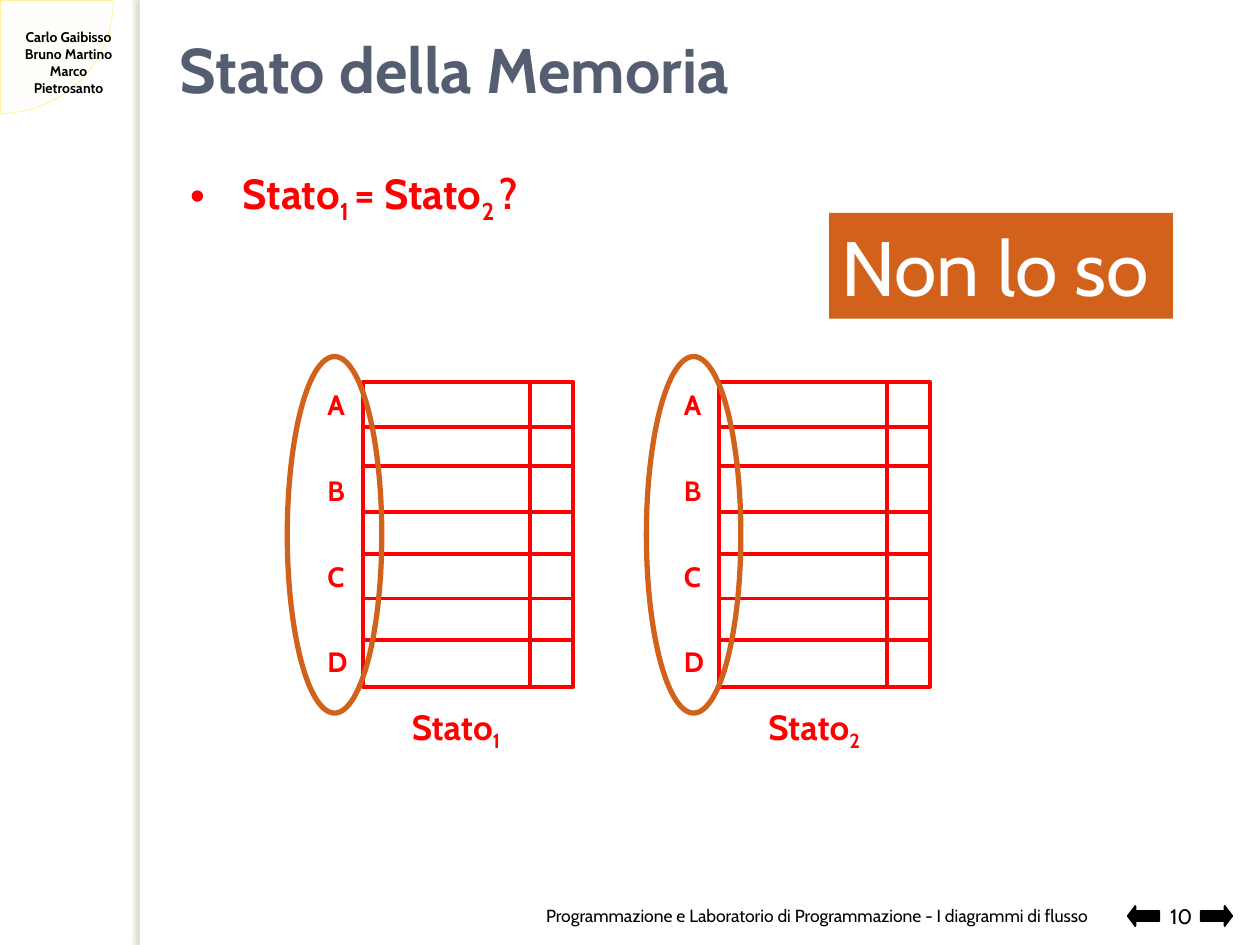
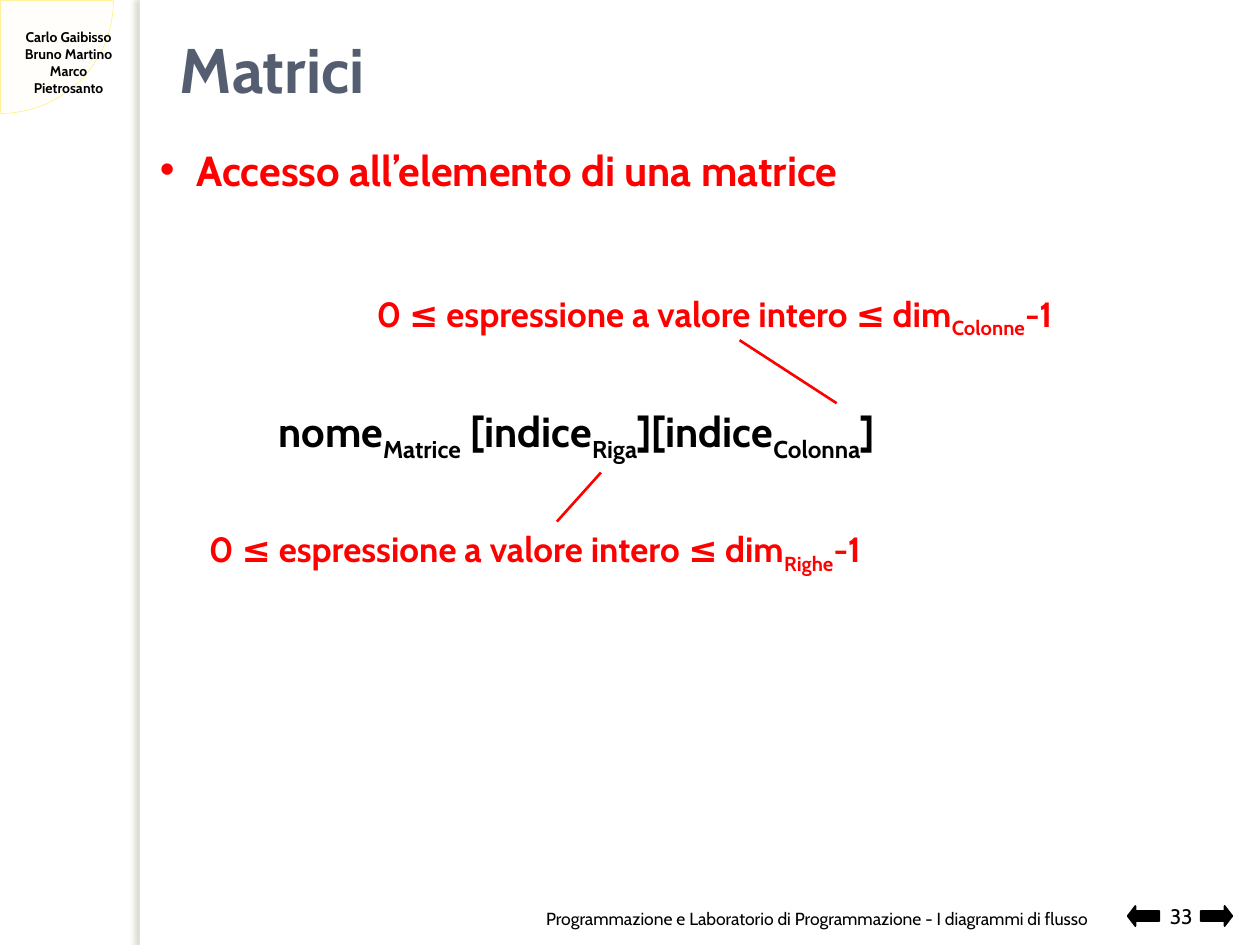
from dataclasses import dataclass

from lxml.etree import SubElement
from pptx import Presentation
from pptx.dml.color import RGBColor
from pptx.enum.shapes import MSO_CONNECTOR, MSO_SHAPE
from pptx.enum.text import MSO_ANCHOR, MSO_AUTO_SIZE, PP_ALIGN
from pptx.oxml.ns import qn
from pptx.util import Inches, Pt

FONT = "Cabin"
BLACK = RGBColor(0x00, 0x00, 0x00)
WHITE = RGBColor(0xFF, 0xFF, 0xFF)
RED = RGBColor(0xFF, 0x00, 0x00)
ORANGE = RGBColor(0xD2, 0x61, 0x1C)
SLATE = RGBColor(0x54, 0x5E, 0x70)
CREAM = RGBColor(0xFF, 0xFD, 0xF1)
YELLOW = RGBColor(0xFF, 0xEC, 0x62)
SHADOW = RGBColor(0x81, 0x7B, 0x4C)

AUTHORS = ["Carlo Gaibisso", "Bruno Martino", "Marco", "Pietrosanto"]
COURSE = "Programmazione e Laboratorio di Programmazione - I diagrammi di flusso"
INDEX_RANGE = "0 ≤ espressione a valore intero ≤ dim"


@dataclass
class Style:
    """Look of a text box; lengths in inches, sizes in points."""
    size: float
    color: RGBColor = RED
    bold: bool = True
    align: PP_ALIGN = PP_ALIGN.LEFT
    anchor: MSO_ANCHOR = MSO_ANCHOR.TOP
    wrap: bool = False
    grow: bool = True
    before: float = 0
    after: float = 0
    indent: float = 0
    bullet: bool = False


@dataclass
class Memory:
    """One memory grid with its labelled cells and caption."""
    left: float
    number: str
    ellipse_left: float


TITLE = Style(36, SLATE, anchor=MSO_ANCHOR.MIDDLE, wrap=True)
AUTHOR = Style(8, BLACK, align=PP_ALIGN.CENTER, wrap=True)
FOOTER = Style(10, BLACK, False, PP_ALIGN.RIGHT, MSO_ANCHOR.BOTTOM, True, False)
NUMBER = Style(12, BLACK, False, PP_ALIGN.CENTER, MSO_ANCHOR.BOTTOM, True, False)
QUESTION = Style(24, anchor=MSO_ANCHOR.MIDDLE, before=3, after=3, indent=0.42, bullet=True)
CAPTION = Style(20, anchor=MSO_ANCHOR.MIDDLE, before=3, after=3)
CELL_LABEL = Style(16)
ANSWER = Style(44, WHITE, False)
TOPIC = Style(24, anchor=MSO_ANCHOR.MIDDLE, wrap=True, before=12, indent=0.29, bullet=True)
SYNTAX = Style(24, BLACK, anchor=MSO_ANCHOR.MIDDLE, wrap=True, before=12, indent=0.29)
RANGE = Style(20)

# Memory grid geometry
GRID_TOP, GRID_BOTTOM, GRID_WIDTH = 3.03, 5.45, 1.67
ROW_LINES = [3.39, 3.70, 4.06, 4.40, 4.75, 5.08]
DIVIDER_OFFSET = 1.33
LABEL_PITCH = 0.68
MEMORIES = [Memory(2.88, "1", 2.28), Memory(5.71, "2", 5.13)]


def add_text(slide, box: tuple, paragraphs: list, style: Style):
    """Each paragraph is a list of runs; every second run is a subscript."""
    sp = slide.shapes.add_textbox(*map(Inches, box))
    tf = sp.text_frame
    tf.word_wrap = style.wrap
    tf.auto_size = MSO_AUTO_SIZE.SHAPE_TO_FIT_TEXT if style.grow else MSO_AUTO_SIZE.NONE
    tf.vertical_anchor = style.anchor
    for i, runs in enumerate(paragraphs):
        p = tf.paragraphs[0] if i == 0 else tf.add_paragraph()
        p.alignment = style.align
        p.space_before, p.space_after = Pt(style.before), Pt(style.after)
        pPr = p._p.get_or_add_pPr()
        if style.indent:
            pPr.set("marL", str(Inches(style.indent)))
            pPr.set("indent", str(-Inches(style.indent)))
        if style.bullet:
            color = SubElement(pPr, qn("a:buClr"))
            SubElement(color, qn("a:srgbClr"), val=str(style.color))
            SubElement(pPr, qn("a:buFont"), typeface="Arial")
            SubElement(pPr, qn("a:buChar"), char="•")
        for j, text in enumerate(runs):
            r = p.add_run()
            r.text = text
            r.font.name, r.font.size, r.font.bold = FONT, Pt(style.size), style.bold
            r.font.color.rgb = style.color
            if j % 2:
                r._r.get_or_add_rPr().set("baseline", "-25000")
    return sp


def add_box(slide, kind: MSO_SHAPE, box: tuple, fill: RGBColor | None = None,
            line: RGBColor | None = None, width: float = 1):
    sp = slide.shapes.add_shape(kind, *map(Inches, box))
    sp.shadow.inherit = False
    if fill is None:
        sp.fill.background()
    else:
        sp.fill.solid()
        sp.fill.fore_color.rgb = fill
    if line is None:
        sp.line.fill.background()
    else:
        sp.line.color.rgb = line
        sp.line.width = Pt(width)
    return sp


def add_line(slide, start: tuple, end: tuple, width: float) -> None:
    line = slide.shapes.add_connector(MSO_CONNECTOR.STRAIGHT, *map(Inches, start + end))
    line.line.color.rgb = RED
    line.line.width = Pt(width)
    SubElement(line._element.spPr, qn("a:effectLst"))


def add_left_shadow(sp) -> None:
    effects = sp._element.spPr.find(qn("a:effectLst"))
    shadow = SubElement(effects, qn("a:outerShdw"), blurRad=str(Pt(3)), dist=str(Pt(3)),
                        dir="10800000", algn="tl", rotWithShape="0")
    color = SubElement(shadow, qn("a:srgbClr"), val=str(SHADOW))
    SubElement(color, qn("a:alpha"), val="25000")


def new_slide(prs, title: str, number: str, footer_top: float = 6.9):
    """Slide with side band, authors, title, footer and arrows."""
    slide = prs.slides.add_slide(prs.slide_layouts[6])
    # Corner quarter disc
    pie = add_box(slide, MSO_SHAPE.PIE, (-0.89, -0.89, 1.79, 1.79), CREAM, YELLOW, 0.25)
    pie.adjustments[0], pie.adjustments[1] = 0, 54.02
    color = pie._element.spPr.find(qn("a:solidFill"))[0]
    SubElement(color, qn("a:alpha"), val="33000")
    # Content panel and its shaded edge
    add_box(slide, MSO_SHAPE.RECTANGLE, (1.11, 0, 8.89, 7.5), WHITE)
    add_left_shadow(add_box(slide, MSO_SHAPE.RECTANGLE, (1.11, 0, 0.08, 7.5), WHITE))
    add_text(slide, (0, 0.18, 1.09, 0.64), [[name] for name in AUTHORS], AUTHOR)
    # Navigation arrows
    for left, rotation in ((9.53, 0), (8.95, 180)):
        arrow = add_box(slide, MSO_SHAPE.RIGHT_ARROW, (left, 7.19, 0.25, 0.16), BLACK, BLACK)
        arrow.adjustments[0], arrow.adjustments[1] = 0.5, 0.38
        arrow.rotation = rotation
    # Title and footer
    add_text(slide, (1.33, 0.19, 8.2, 0.71), [[title]], TITLE)
    add_text(slide, (3.5, footer_top, 5.23, 0.52), [[COURSE]], FOOTER)
    add_text(slide, (8.83, 6.9, 1.09, 0.52), [[number]], NUMBER)
    return slide


def add_memory(slide, memory: Memory) -> None:
    left, right = memory.left, memory.left + GRID_WIDTH
    add_box(slide, MSO_SHAPE.RECTANGLE, (left, GRID_TOP, GRID_WIDTH, GRID_BOTTOM - GRID_TOP),
            line=RED, width=2.25)
    divider = left + DIVIDER_OFFSET
    add_line(slide, (divider, GRID_TOP), (divider, GRID_BOTTOM), 2.25)
    for y in ROW_LINES:
        add_line(slide, (left, y), (right, y), 2.25)
    for i, label in enumerate("ABCD"):
        add_text(slide, (left - 0.38, GRID_TOP + i * LABEL_PITCH, 0.38, 0.37),
                 [[label]], CELL_LABEL)
    add_text(slide, (left + 0.29, 5.57, 1.06, 0.43), [["Stato", memory.number]], CAPTION)


def build_memory_slide(prs) -> None:
    slide = new_slide(prs, "Stato della Memoria", "10", footer_top=6.88)
    add_text(slide, (1.41, 1.31, 3.12, 0.5), [["Stato", "1 ", "= Stato", "2 ", "?"]], QUESTION)
    for memory in MEMORIES:
        add_memory(slide, memory)
    # Answer and highlighted labels
    answer = add_text(slide, (6.58, 1.69, 2.73, 0.84), [["Non lo so"]], ANSWER)
    answer.fill.solid()
    answer.fill.fore_color.rgb = ORANGE
    for memory in MEMORIES:
        add_box(slide, MSO_SHAPE.OVAL, (memory.ellipse_left, 2.83, 0.75, 2.83),
                line=ORANGE, width=3)


def build_matrix_slide(prs) -> None:
    slide = new_slide(prs, "Matrici", "33")
    add_text(slide, (1.17, 1.09, 7.58, 0.51), [["Accesso all’elemento di una matrice"]], TOPIC)
    add_text(slide, (2.11, 3.2, 6.48, 0.5),
             [["nome", "Matrice", " [indice", "Riga", "][indice", "Colonna", "]"]], SYNTAX)
    # Index ranges with their pointers
    add_text(slide, (1.56, 4.14, 5.71, 0.44), [[INDEX_RANGE, "Righe", "-1"]], RANGE)
    add_line(slide, (4.42, 4.14), (4.77, 3.75), 1.5)
    add_text(slide, (2.89, 2.27, 5.95, 0.44), [[INDEX_RANGE, "Colonne", "-1"]], RANGE)
    add_line(slide, (5.87, 2.7), (6.64, 3.2), 1.5)


def main() -> None:
    prs = Presentation()
    prs.slide_width, prs.slide_height = Inches(10), Inches(7.5)
    build_memory_slide(prs)
    build_matrix_slide(prs)
    prs.save("out.pptx")


if __name__ == "__main__":
    main()
